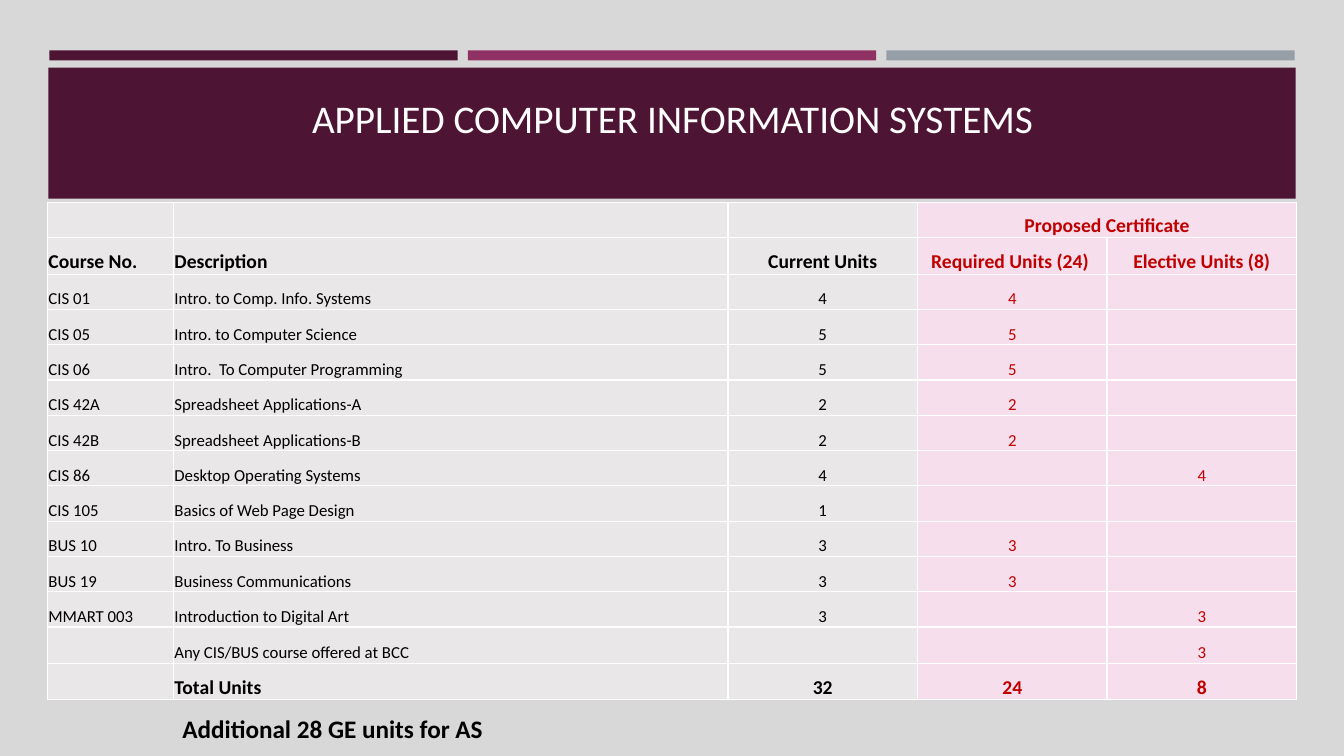
from dataclasses import dataclass

from lxml import etree
from pptx import Presentation
from pptx.dml.color import RGBColor
from pptx.enum.shapes import MSO_SHAPE
from pptx.enum.text import MSO_ANCHOR, PP_ALIGN
from pptx.oxml.ns import qn
from pptx.util import Inches, Pt

RECT = MSO_SHAPE.RECTANGLE
BOTTOM, TOP = MSO_ANCHOR.BOTTOM, MSO_ANCHOR.TOP
LEFT, CENTER = PP_ALIGN.LEFT, PP_ALIGN.CENTER


@dataclass(frozen=True)
class Theme:
    """Colours, font and type sizes of the slide."""
    font: str = "Calibri"
    back: str = "D8D8D8"
    plum: str = "4D1434"
    rose: str = "903163"
    slate: str = "969FA7"
    gray: str = "E9E7E8"
    pink: str = "F6DEEC"
    red: str = "C00000"
    black: str = "000000"
    white: str = "FFFFFF"
    title: int = 28
    note: int = 18
    head: int = 14
    body: int = 12


THEME = Theme()
WIDTHS = [1.25, 5.5, 1.88, 1.88, 1.88]
TALL_ROWS = {1, 12, 13}
BOLD_ROWS = {0, 1, 13}
ROWS = [
    ("", "", "", "Proposed Certificate", ""),
    ("Course No.", "Description", "Current Units", "Required Units (24) ", "Elective Units (8)"),
    ("CIS 01", "Intro. to Comp. Info. Systems", "4", "4", ""),
    ("CIS 05", "Intro. to Computer Science", "5", "5", ""),
    ("CIS 06", "Intro.  To Computer Programming", "5", "5", ""),
    ("CIS 42A", "Spreadsheet Applications-A", "2", "2", ""),
    ("CIS 42B", "Spreadsheet Applications-B", "2", "2", ""),
    ("CIS 86", "Desktop Operating Systems", "4", "", "4"),
    ("CIS 105", "Basics of Web Page Design", "1", "", ""),
    ("BUS 10", "Intro. To Business", "3", "3", ""),
    ("BUS 19", "Business Communications", "3", "3", ""),
    ("MMART 003", "Introduction to Digital Art", "3", "", "3"),
    ("", "Any CIS/BUS course offered at BCC", "", "", "3"),
    ("", "Total Units", "32", "24", "8"),
]


def paint(fill, color):
    """Set a solid fill."""
    fill.solid()
    fill.fore_color.rgb = RGBColor.from_string(color)


def write(frame, text, size, color, bold=False, align=LEFT):
    """Put one styled paragraph in a text frame."""
    para = frame.paragraphs[0]
    para.text = text
    para.alignment = align
    font = para.font
    font.name, font.size, font.bold = THEME.font, Pt(size), bold
    font.color.rgb = RGBColor.from_string(color)


def add_bar(slide, left, top, width, height, color):
    """Draw a plain filled bar."""
    bar = slide.shapes.add_shape(RECT, Inches(left), Inches(top), Inches(width), Inches(height))
    bar.shadow.inherit = False
    bar.line.fill.background()
    paint(bar.fill, color)


def add_label(slide, left, top, width, height, anchor=TOP):
    """Add a wrapping text box and return its frame."""
    box = slide.shapes.add_textbox(Inches(left), Inches(top), Inches(width), Inches(height))
    frame = box.text_frame
    frame.word_wrap = True
    frame.vertical_anchor = anchor
    return frame


def edge(cell, color):
    """Draw a one-point border on all four sides of a cell."""
    props = cell._tc.get_or_add_tcPr()
    for side in ("a:lnL", "a:lnR", "a:lnT", "a:lnB"):
        line = etree.SubElement(props, qn(side), w=str(Pt(1)))
        fill = etree.SubElement(line, qn("a:solidFill"))
        etree.SubElement(fill, qn("a:srgbClr"), val=color)


def fill_cell(cell, text, row, col):
    """Style and fill one cell by its place in the table."""
    new = col > 2
    bold = row in BOLD_ROWS
    edge(cell, THEME.white)
    paint(cell.fill, THEME.pink if new else THEME.gray)
    cell.margin_left = cell.margin_right = cell.margin_top = Inches(0.01)
    cell.margin_bottom = 0
    cell.vertical_anchor = BOTTOM
    write(cell.text_frame, text, THEME.head if bold else THEME.body,
          THEME.red if new else THEME.black, bold, CENTER if col > 1 else LEFT)


def add_units(slide):
    """Build the table of courses and units."""
    frame = slide.shapes.add_table(len(ROWS), len(WIDTHS), Inches(0.47), Inches(2.01),
                                   Inches(sum(WIDTHS)), Inches(4.9))
    table = frame.table
    for col, width in enumerate(WIDTHS):
        table.columns[col].width = Inches(width)
    for row, texts in enumerate(ROWS):
        table.rows[row].height = Inches(0.36 if row in TALL_ROWS else 0.35)
        for col, text in enumerate(texts):
            fill_cell(table.cell(row, col), text, row, col)
    table.cell(0, 3).merge(table.cell(0, 4))


def main():
    """Build and save the slide."""
    deck = Presentation()
    deck.slide_width, deck.slide_height = Inches(13.33), Inches(7.5)
    slide = deck.slides.add_slide(deck.slide_layouts[6])
    paint(slide.background.fill, THEME.back)
    for step, color in enumerate((THEME.plum, THEME.rose, THEME.slate)):
        add_bar(slide, 0.49 + 4.15 * step, 0.5, 4.05, 0.1, color)
    add_bar(slide, 0.48, 0.67, 12.37, 1.3, THEME.plum)
    title = add_label(slide, 0.64, 0.77, 12.06, 1.13, BOTTOM)
    title.margin_bottom = Inches(0.5)
    write(title, "APPLIED COMPUTER INFORMATION SYSTEMS", THEME.title, THEME.white, align=CENTER)
    add_units(slide)
    note = add_label(slide, 1.71, 7.03, 4.29, 0.4)
    write(note, "Additional 28 GE units for AS", THEME.note, THEME.black, True)
    deck.save("out.pptx")


if __name__ == "__main__":
    main()
